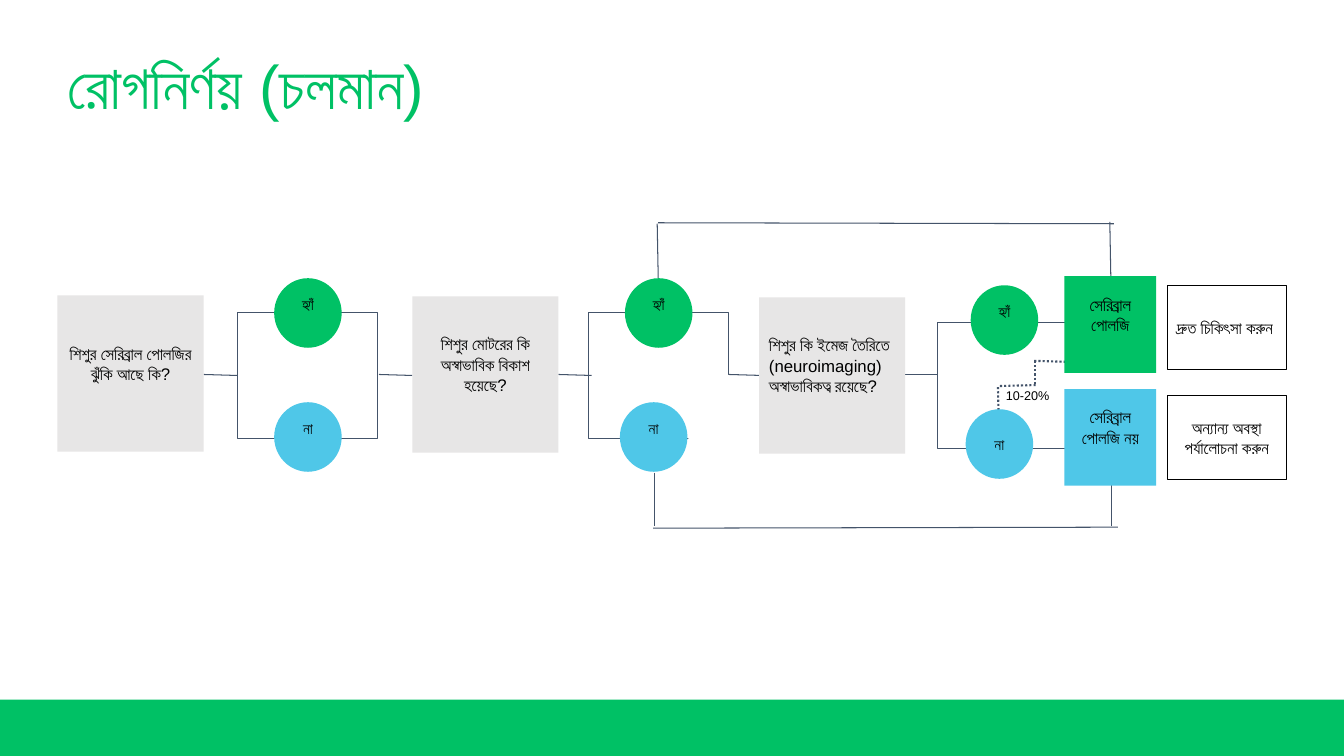
"""Build the cerebral palsy diagnosis flowchart slide on a grid of tenth-inch cells."""
import pptx
import pptx.dml.color
import pptx.enum.dml
import pptx.enum.shapes
import pptx.enum.text
import pptx.oxml
import pptx.oxml.ns
import pptx.util

RGBColor = pptx.dml.color.RGBColor
GREEN = RGBColor(0x00, 0xC1, 0x65)
BLUE = RGBColor(0x4F, 0xC7, 0xE8)
GREY = RGBColor(0xE7, 0xE6, 0xE6)
SLATE = RGBColor(0x44, 0x54, 0x6A)
BLACK = RGBColor(0, 0, 0)
WHITE = RGBColor(0xFF, 0xFF, 0xFF)
RECT = pptx.enum.shapes.MSO_SHAPE.RECTANGLE
OVAL = pptx.enum.shapes.MSO_SHAPE.OVAL
LEFT = pptx.enum.text.PP_ALIGN.LEFT
CENTER = pptx.enum.text.PP_ALIGN.CENTER
COLUMNS, ROWS = 133.33, 75


def cells(*counts):
    return [pptx.util.Inches(count / 10) for count in counts]


def write(holder, *texts, size=12, color=BLACK, bolds=(None, None), align=CENTER,
          insets=(1, 1, 1, 1), spacing=None):
    frame = holder.text_frame
    frame.word_wrap = True
    frame.vertical_anchor = pptx.enum.text.MSO_ANCHOR.MIDDLE
    (frame.margin_left, frame.margin_top,
     frame.margin_right, frame.margin_bottom) = cells(*insets)
    paragraph = frame.paragraphs[0]
    paragraph.alignment = align
    paragraph.line_spacing = spacing
    for text, bold in zip(texts, bolds):
        run = paragraph.add_run()
        run.text = text
        run.font.name = "Arial"
        run.font.size = pptx.util.Pt(size)
        run.font.bold = bold
        run.font.color.rgb = color


deck = pptx.Presentation()
deck.slide_width, deck.slide_height = cells(COLUMNS, ROWS)
slide = deck.slides.add_slide(deck.slide_layouts[5])

heading = slide.shapes.title
heading.left, heading.top, heading.width, heading.height = cells(5.7, 5, 54.7, 7.8)
write(heading, "রোগনির্ণয় ", "(চলমান)", size=44, color=GREEN, bolds=(True, False),
      align=LEFT, insets=(1, 0.5, 1, 0.5), spacing=0.9)

footer_band = (0, 69.4, COLUMNS, 5.6, GREEN, None)
brackets = [(left, top, 13.9, 12.5, None, SLATE)
            for left, top in ((93, 32), (23.6, 31), (58.4, 31))]
bracket_openings = [(105.8, 29.5, 3.3, 15.4, WHITE, None),
                    (68.3, 37.2, 6.7, 8.4, WHITE, None)]
for left, top, width, height, fill, outline in [footer_band, *brackets, *bracket_openings]:
    area = slide.shapes.add_shape(RECT, *cells(left, top, width, height))
    area.shadow.inherit = False
    if fill is None:
        area.fill.background()
    else:
        area.fill.solid()
        area.fill.fore_color.rgb = fill
    if outline is None:
        area.line.fill.background()
    else:
        area.line.color.rgb = outline
        area.line.width = pptx.util.Pt(0.75)

steps = [(left, 37.15, left + 3.3, 37.25) for left in (20.2, 37.6, 55.4, 72.3)]
steps.append((89.7, 37.2, 93, 37.2))
yes_detour = [(65.2, 22.2, 65.3, 27.6), (65.3, 22.1, 110.5, 22.2), (110.1, 22, 110.2, 27.4)]
no_detour = [(110.3, 52.2, 110.3, 46.9), (110.9, 52.3, 64.8, 52.4), (64.9, 46.9, 64.9, 52.2)]
exception = [(99, 38.4, 99.1, 42.4), (102.6, 35.8, 105.9, 35.9),
             (102.7, 35.8, 102.7, 38.1), (99.2, 38.3, 102.8, 38.2)]
for links, weight, dotted in ((steps + yes_detour + no_detour, 0.75, False),
                              (exception, 1.5, True)):
    for ends in links:
        link = slide.shapes.add_connector(pptx.enum.shapes.MSO_CONNECTOR.STRAIGHT, *cells(*ends))
        link.line.color.rgb = SLATE
        link.line.width = pptx.util.Pt(weight)
        if dotted:
            link.line.dash_style = pptx.enum.dml.MSO_LINE.ROUND_DOT
        properties = link._element.find(pptx.oxml.ns.qn("p:spPr"))
        properties.append(pptx.oxml.parse_xml(
            f'<a:effectLst {pptx.oxml.ns.nsdecls("a")}/>'))

RAISED = (1, 1, 1, 3)
LEVEL = (1, 1, 1, 1)
RAISED_OVAL = (0, 0, 0, 1.8)
LEVEL_OVAL = (0, 0, 0, 0)
questions = [
    (RECT, 5.7, 29.3, 14.5, 15.5, GREY, None, "শিশুর সেরিব্রাল পোলজির ঝুঁকি আছে কি?", 12, CENTER, RAISED),
    (RECT, 40.9, 29.4, 14.5, 15.5, GREY, None, "শিশুর মোটরের কি অস্বাভাবিক বিকাশ হয়েছে?", 12, CENTER, RAISED),
    (RECT, 75.3, 29.5, 14.5, 15.5, GREY, None,
     "শিশুর কি ইমেজ তৈরিতে (neuroimaging) অস্বাভাবিকত্ব রয়েছে?", 12, LEFT, RAISED),
]
answers = [
    (OVAL, left, top, 6.7, 6.9, fill, None, text, 11, CENTER, insets)
    for left, top, fill, text, insets in (
        (27.2, 39.9, BLUE, "না", RAISED_OVAL), (27.2, 27.6, GREEN, "হ্যাঁ", RAISED_OVAL),
        (61.5, 39.9, BLUE, "না", RAISED_OVAL), (62, 27.6, GREEN, "হ্যাঁ", RAISED_OVAL),
        (95.8, 40.6, BLUE, "না", LEVEL_OVAL), (96.3, 28.3, GREEN, "হ্যাঁ", RAISED_OVAL))
]
outcomes = [
    (RECT, 105.6, 38.6, 9.1, 9.6, BLUE, None, "সেরিব্রাল পোলজি নয়", 12, CENTER, RAISED),
    (RECT, 105.6, 27.4, 9.1, 9.6, GREEN, None, "সেরিব্রাল পোলজি", 12, CENTER, RAISED),
]
actions = [
    (RECT, 115.8, 39.2, 11.8, 8.4, WHITE, BLACK, "অন্যান্য অবস্থা পর্যালোচনা করুন", 12, CENTER, LEVEL),
    (RECT, 115.8, 28.3, 11.8, 8.4, WHITE, BLACK, "দ্রুত চিকিৎসা করুন", 12, LEFT, LEVEL),
]
for (outline_kind, left, top, width, height, fill, outline,
     text, size, align, insets) in questions + answers + outcomes + actions:
    node = slide.shapes.add_shape(outline_kind, *cells(left, top, width, height))
    node.shadow.inherit = False
    node.fill.solid()
    node.fill.fore_color.rgb = fill
    if outline is None:
        node.line.fill.background()
    else:
        node.line.color.rgb = outline
        node.line.width = pptx.util.Pt(0.75)
    write(node, text, size=size, align=align, insets=insets)

exception_rate = slide.shapes.add_textbox(*cells(98.8, 38.1, 9.1, 2.3))
write(exception_rate, "10-20%", size=9, align=LEFT)

deck.save("out.pptx")
